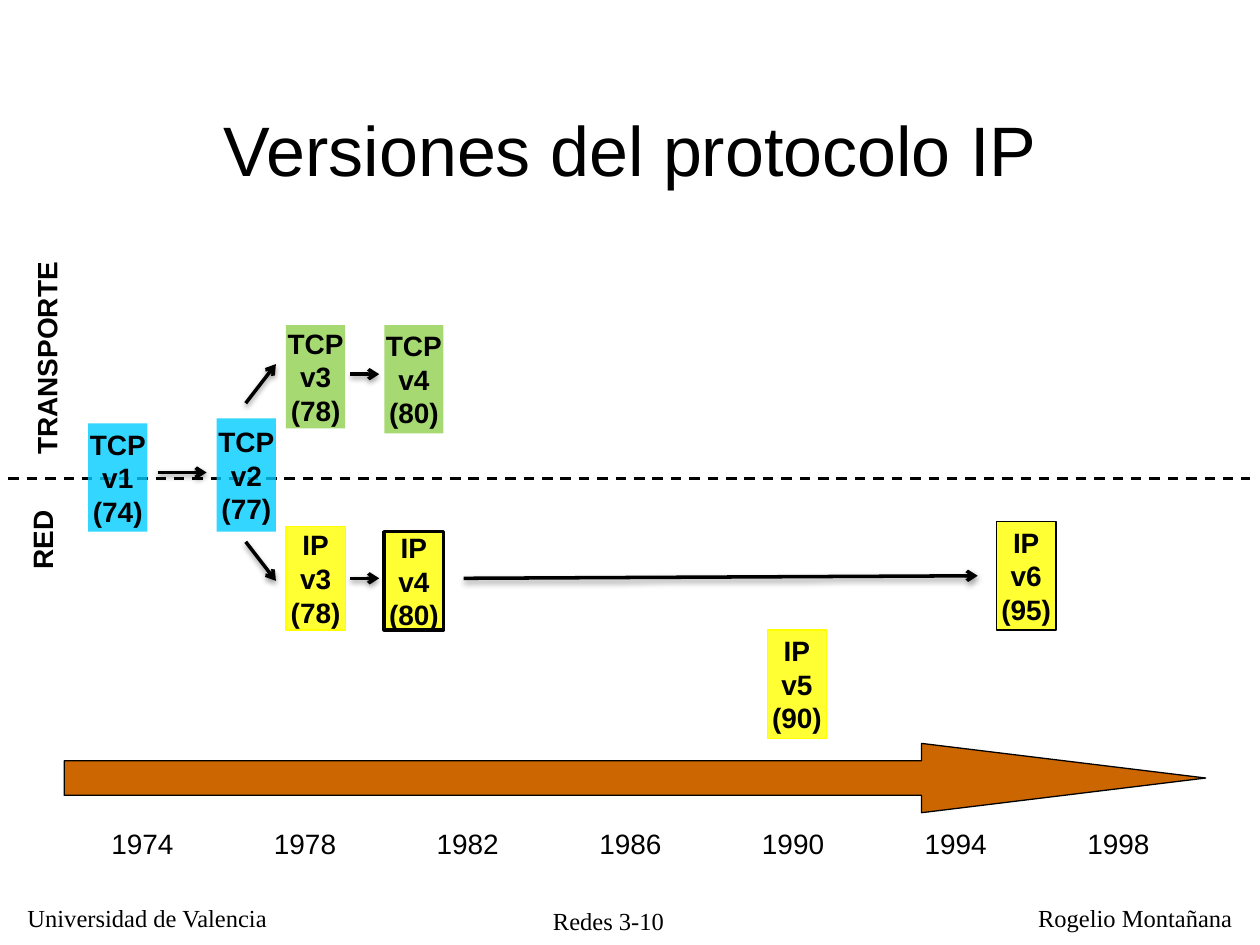
from lxml import etree
from pptx import Presentation
from pptx import util as u
from pptx.dml.color import RGBColor
from pptx.enum import dml, shapes, text
from pptx.oxml import ns

prs = Presentation()
prs.slide_width, prs.slide_height = u.Inches(10), u.Inches(7.5)
s = prs.slides.add_slide(prs.slide_layouts[6])
rgb = RGBColor.from_string
LEFT, CENTER = text.PP_ALIGN.LEFT, text.PP_ALIGN.CENTER
A = ns.nsdecls("a")


def grid(*cells):
    """Lengths on a grid of 100 columns by 75 rows of square cells."""
    return [int(prs.slide_width * n / 100) for n in cells]


def write(sp, words, size, font="Arial", bold=False, align=CENTER, wrap=False):
    tf = sp.text_frame
    tf.text = words
    tf.word_wrap = wrap
    for p in tf.paragraphs:
        p.alignment = align
        for r in p.runs:
            r.font.size, r.font.name, r.font.bold = u.Pt(size), font, bold
            r.font.color.rgb = rgb("000000")
    return tf


# Footer
for words, box, align in [
    ("Redes 3-10", (41.8, 71.4, 13, 3), CENTER),
    ("Universidad de Valencia", (1.2, 71.2, 21.3, 3.3), LEFT),
    ("Rogelio Montañana", (81.4, 71.2, 17.4, 3.3), LEFT),
]:
    write(s.shapes.add_textbox(*grid(*box)), words, 14, "Times New Roman", align=align)

# Title
sp = s.shapes.add_textbox(*grid(7.5, 5.5, 85, 12.5))
tf = write(sp, "Versiones del protocolo IP", 40, wrap=True)
tf.vertical_anchor = text.MSO_ANCHOR.MIDDLE

# Border between the two layers
ln = s.shapes.add_connector(shapes.MSO_CONNECTOR.STRAIGHT, *grid(-0.8, 38, 99.2, 38))
ln.line.color.rgb, ln.line.width = rgb("000000"), u.Pt(1.5)
ln.line.dash_style = dml.MSO_LINE.DASH
etree.SubElement(ln._element.spPr, ns.qn("a:effectLst"))

# Time arrow
sp = s.shapes.add_shape(shapes.MSO_SHAPE.RIGHT_ARROW, *grid(5.1, 59, 90.6, 5.5))
sp.adjustments[0], sp.adjustments[1] = 0.5, 4.1
sp.shadow.inherit = False
sp.fill.solid()
sp.fill.fore_color.rgb = rgb("CC6600")
sp.line.color.rgb, sp.line.width = rgb("000000"), u.Pt(0.75)

# Years, one every four
for i, year in enumerate(range(1974, 1999, 4)):
    write(s.shapes.add_textbox(*grid(7.8 + 12.91 * i, 65.1, 7, 3.7)), str(year), 16)

# Layer names
for words, box in [("RED", (0, 41, 6.7, 3.7)), ("TRANSPORTE", (-5, 26.6, 17.4, 3.7))]:
    sp = s.shapes.add_textbox(*grid(*box))
    sp.rotation = 270
    write(sp, words, 16, bold=True)

# Protocol versions: words, left, top, height, fill, line, line width
BLUE, GREEN, YELLOW, BLACK = "00CCFF", "92D050", "FFFF00", "000000"
for words, x, y, h, fill, line, width in [
    ("TCP\nv1\n(74)", 7, 33.6, 8.6, BLUE, None, 0),
    ("TCP\nv2\n(77)", 17.2, 33.2, 9, BLUE, None, 0),
    ("IP\nv3\n(78)", 22.7, 41.8, 8.2, YELLOW, YELLOW, 0.75),
    ("TCP\nv3\n(78)", 22.7, 25.8, 8.2, GREEN, None, 0),
    ("IP\nv4\n(80)", 30.5, 42.2, 7.8, YELLOW, BLACK, 2),
    ("TCP\nv4\n(80)", 30.5, 25.8, 8.6, GREEN, None, 0),
    ("IP\nv5\n(90)", 60.9, 50, 8.6, YELLOW, YELLOW, 0.75),
    ("IP\nv6\n(95)", 79.1, 41.4, 8.6, YELLOW, BLACK, 1),
]:
    sp = s.shapes.add_shape(shapes.MSO_SHAPE.RECTANGLE, *grid(x, y, 4.7, h))
    sp.shadow.inherit = False
    sp.fill.solid()
    sp.fill.fore_color.rgb = rgb(fill)
    clr = sp._element.spPr.find(".//" + ns.qn("a:srgbClr"))
    etree.SubElement(clr, ns.qn("a:alpha"), val="80000")
    if line:
        sp.line.color.rgb, sp.line.width = rgb(line), u.Pt(width)
    else:
        sp.line.fill.background()
    tf = write(sp, words, 16, bold=True)
    tf.vertical_anchor = text.MSO_ANCHOR.MIDDLE

# Arrows from each version to the next, with a soft shadow below
SHADOW = (
    f'<a:effectLst {A}><a:outerShdw blurRad="40000" dist="20000" dir="5400000" rotWithShape="0">'
    '<a:srgbClr val="000000"><a:alpha val="38000"/></a:srgbClr></a:outerShdw></a:effectLst>'
)
for ends in [
    (12.5, 37.5, 16.4, 37.5),
    (19.5, 32, 21.9, 28.9),
    (19.5, 43, 21.9, 46.1),
    (27.8, 29.7, 30.1, 29.7),
    (27.8, 45.9, 30.1, 45.9),
    (36.8, 45.9, 77.6, 45.7),
]:
    ln = s.shapes.add_connector(shapes.MSO_CONNECTOR.STRAIGHT, *grid(*ends))
    ln.line.color.rgb, ln.line.width = rgb("000000"), u.Pt(2)
    etree.SubElement(ln.line._get_or_add_ln(), ns.qn("a:tailEnd"), type="arrow")
    ln._element.spPr.append(etree.fromstring(SHADOW))

prs.save("out.pptx")
